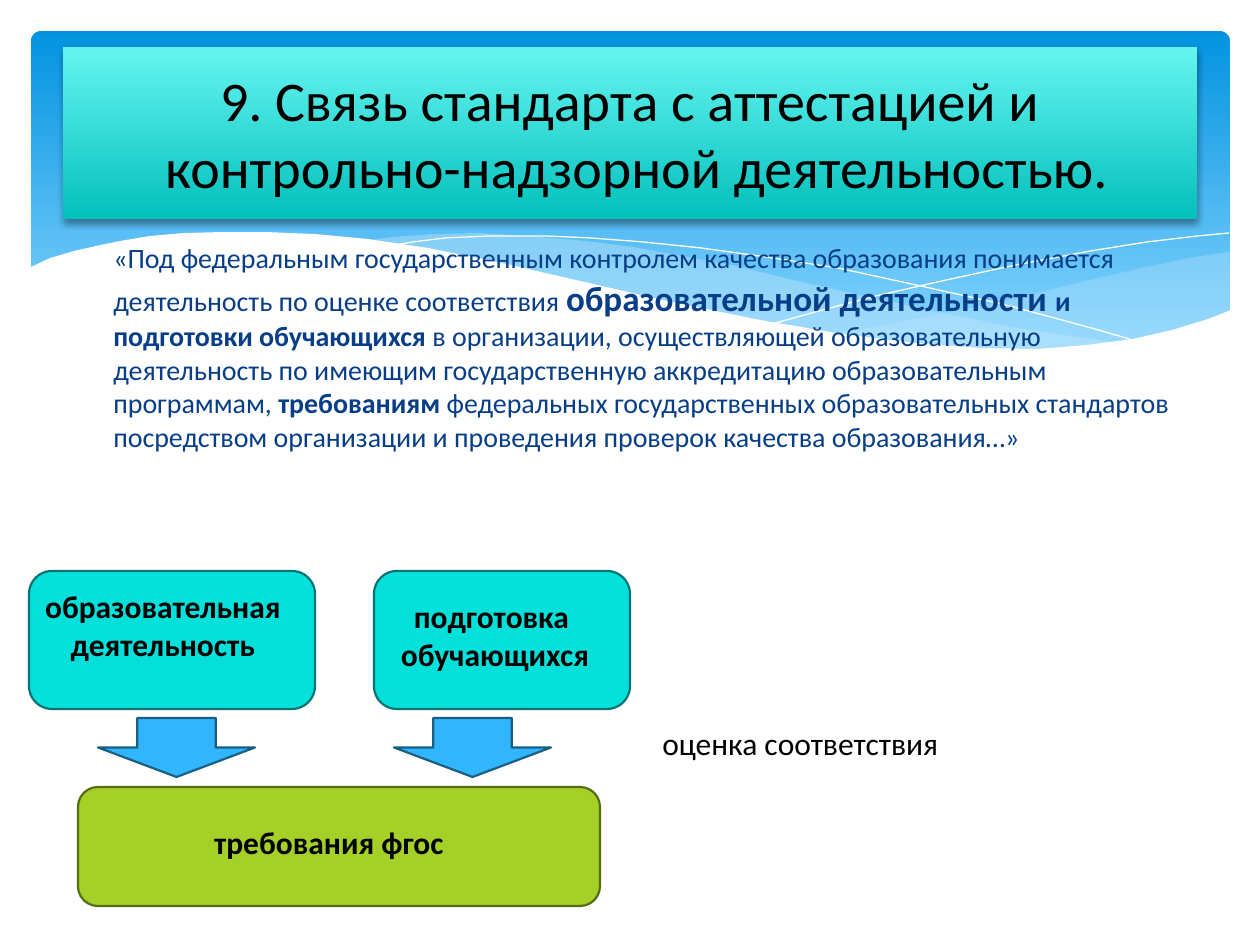
import pptx
import pptx.util
import pptx.dml.color
import pptx.enum.shapes
import pptx.enum.text
import pptx.oxml
import pptx.oxml.ns

SCALE = 914400 / 126  # EMU in one px
FONT = "Calibri"
SHAPES = pptx.enum.shapes.MSO_SHAPE
ALIGN = pptx.enum.text.PP_ALIGN
ANCHOR = pptx.enum.text.MSO_ANCHOR

# Content
TITLE = "9. Связь стандарта с аттестацией и контрольно-надзорной деятельностью."
QUOTE = [  # text, size, bold
    ("\t", 24, False),
    ("«Под федеральным государственным контролем качества образования понимается "
     "деятельность по оценке соответствия ", 16, False),
    ("образовательной деятельности ", 20, True),
    ("и подготовки обучающихся ", 16, True),
    ("в организации, осуществляющей образовательную деятельность по имеющим "
     "государственную аккредитацию образовательным программам, ", 16, False),
    ("требованиям", 16, True),
    (" федеральных государственных образовательных стандартов посредством "
     "организации и проведения проверок качества образования…»", 16, False),
]
BOXES = [  # left, top, width, height, fill, line
    (374, 571, 256, 138, "05E0DB", "037572"),
    (29, 571, 286, 138, "05E0DB", "037572"),
    (78, 787, 522, 119, "A5D028", "566D15"),
]
LABELS = [  # left, top, width, height, text, bold, alignment
    (650, 718, 313, 50, "оценка соответствия", False, ALIGN.LEFT),
    (29, 581, 275, 89, "образовательная \nдеятельность ", True, ALIGN.CENTER),
    (384, 591, 222, 89, "подготовка \nобучающихся", True, ALIGN.CENTER),
    (197, 817, 264, 50, "требования фгос", True, ALIGN.CENTER),
]
ARROW_LEFTS = [394, 98]

# Header waves: outline points, fill, opacity in percent
WAVES = [
    ([(1229, 252), (1194, 257), (1142, 268), (1085, 281), (1014, 299), (949, 312),
      (890, 324), (833, 334), (871, 339), (906, 343), (954, 348), (1012, 350),
      (1063, 349), (1110, 344), (1150, 336), (1187, 326), (1230, 311), (1230, 252)],
     "C6E7FC", 29),
    ([(1125, 344), (1091, 339), (1017, 328), (934, 311), (842, 291), (793, 280),
      (736, 266), (682, 256), (633, 247), (586, 241), (529, 236), (479, 233),
      (433, 234), (394, 237), (360, 241), (407, 247), (456, 256), (509, 266),
      (566, 280), (668, 302), (736, 318), (799, 329), (857, 338), (910, 345),
      (959, 349), (1003, 350), (1043, 350), (1080, 349), (1104, 346)],
     "C6E7FC", 40),
    ([(389, 246), (413, 242), (445, 238), (488, 236), (546, 236), (591, 238),
      (643, 242), (701, 248), (766, 257), (838, 268), (916, 285), (1002, 304),
      (1047, 316), (1095, 329), (1143, 343)], None, 100),
    ([(772, 324), (823, 310), (876, 296), (942, 281), (1016, 265), (1091, 251),
      (1147, 242), (1198, 236), (1229, 233)], None, 100),
    ([(1231, 310), (1208, 319), (1172, 330), (1133, 339), (1087, 345), (1037, 349),
      (980, 348), (915, 343), (842, 334), (760, 320), (667, 301), (563, 277),
      (493, 261), (428, 248), (368, 239), (315, 234), (266, 232), (223, 232),
      (184, 233), (150, 236), (120, 241), (96, 246), (74, 251), (50, 258),
      (29, 268), (29, 415), (1231, 415)], "FFFFFF", 100),
]


def px(*values):
    return [pptx.util.Emu(round(value * SCALE)) for value in values]


def rgb(value):
    return pptx.dml.color.RGBColor.from_string(value)


def xml(tag, inner="", **attributes):
    pairs = "".join(f' {name}="{value}"' for name, value in attributes.items())
    return pptx.oxml.parse_xml(
        f'<a:{tag} {pptx.oxml.ns.nsdecls("a")}{pairs}>{inner}</a:{tag}>')


def paint(shape, fill=None, line=None, width=1.25):
    shape.shadow.inherit = False
    if fill:
        shape.fill.solid()
        shape.fill.fore_color.rgb = rgb(fill)
    else:
        shape.fill.background()
    if line:
        shape.line.color.rgb = rgb(line)
        shape.line.width = pptx.util.Pt(width)
    else:
        shape.line.fill.background()


def paint_gradient(shape, first, last, end):
    shape.fill.gradient()
    shape.fill.gradient_angle = 270
    for stop, color, position in zip(shape.fill.gradient_stops, (first, last), (0, end)):
        stop.color.rgb = rgb(color)
        stop.position = position


def style(run, size, color="000000", bold=False):
    run.font.name = FONT
    run.font.size = pptx.util.Pt(size)
    run.font.bold = bold
    run.font.color.rgb = rgb(color)


def indent(paragraph, margin, first):
    properties = paragraph._p.get_or_add_pPr()
    properties.set("marL", str(px(margin)[0]))
    properties.set("indent", str(px(first)[0]))


def add_wave(slide, points, fill, opacity):
    builder = slide.shapes.build_freeform(*points[0], scale=SCALE)
    builder.add_line_segments(points[1:], close=fill is not None)
    wave = builder.convert_to_shape()
    paint(wave, fill, None if fill else "FFFFFF", 0)
    if opacity < 100:
        color = wave.element.spPr.find(".//" + pptx.oxml.ns.qn("a:srgbClr"))
        color.append(xml("alpha", val=opacity * 1000))


def add_quote(slide):
    frame = slide.shapes.add_textbox(*px(63, 220, 1134, 350)).text_frame
    frame.word_wrap = True
    paragraph = frame.paragraphs[0]
    indent(paragraph, 38, -38)
    paragraph.space_before = pptx.util.Pt(4)
    for text, size, bold in QUOTE:
        run = paragraph.add_run()
        run.text = text
        style(run, size, "073E87", bold)


def add_label(slide, left, top, width, height, text, bold, alignment):
    frame = slide.shapes.add_textbox(*px(left, top, width, height)).text_frame
    frame.word_wrap = False
    frame.auto_size = pptx.enum.text.MSO_AUTO_SIZE.SHAPE_TO_FIT_TEXT
    frame.text = text
    for paragraph in frame.paragraphs:
        paragraph.alignment = alignment
        style(paragraph.runs[0], 18, bold=bold)


def format_title(slide):
    title = slide.shapes.title
    title.left, title.top, title.width, title.height = px(63, 47, 1134, 172)
    paint_gradient(title, "65F5F1", "04C0BB", 1)
    shade = '<a:srgbClr val="000000"><a:alpha val="38000"/></a:srgbClr>'
    shadow = ('<a:outerShdw blurRad="50800" dist="25400" dir="5400000" rotWithShape="0">'
              f'{shade}</a:outerShdw>')
    title.element.spPr.append(xml("effectLst", shadow))
    frame = title.text_frame
    frame.text = TITLE
    frame.word_wrap = True
    frame.auto_size = pptx.enum.text.MSO_AUTO_SIZE.NONE
    frame.vertical_anchor = ANCHOR.MIDDLE
    paragraph = frame.paragraphs[0]
    paragraph.alignment = ALIGN.CENTER
    indent(paragraph, 14, -71)
    style(paragraph.runs[0], 32)
    slide.shapes.element.append(title.element)  # bring to front


def main():
    presentation = pptx.Presentation()
    presentation.slide_width, presentation.slide_height = px(1260, 945)
    slide = presentation.slides.add_slide(presentation.slide_layouts[5])

    # Header band and waves
    band = slide.shapes.add_shape(SHAPES.ROUNDED_RECTANGLE, *px(31, 31, 1199, 340))
    band.adjustments[0] = 0.03
    paint(band)
    paint_gradient(band, "0293E0", "83D3FE", 0.9)
    for wave in WAVES:
        add_wave(slide, *wave)

    # Diagram boxes, texts and arrows
    for *place, fill, line in BOXES:
        paint(slide.shapes.add_shape(SHAPES.ROUNDED_RECTANGLE, *px(*place)), fill, line)
    add_quote(slide)
    for label in LABELS:
        add_label(slide, *label)
    for left in ARROW_LEFTS:
        arrow = slide.shapes.add_shape(SHAPES.DOWN_ARROW, *px(left, 718, 157, 59))
        paint(arrow, "31B6FD", "195F84")

    format_title(slide)
    presentation.save("out.pptx")


if __name__ == "__main__":
    main()
